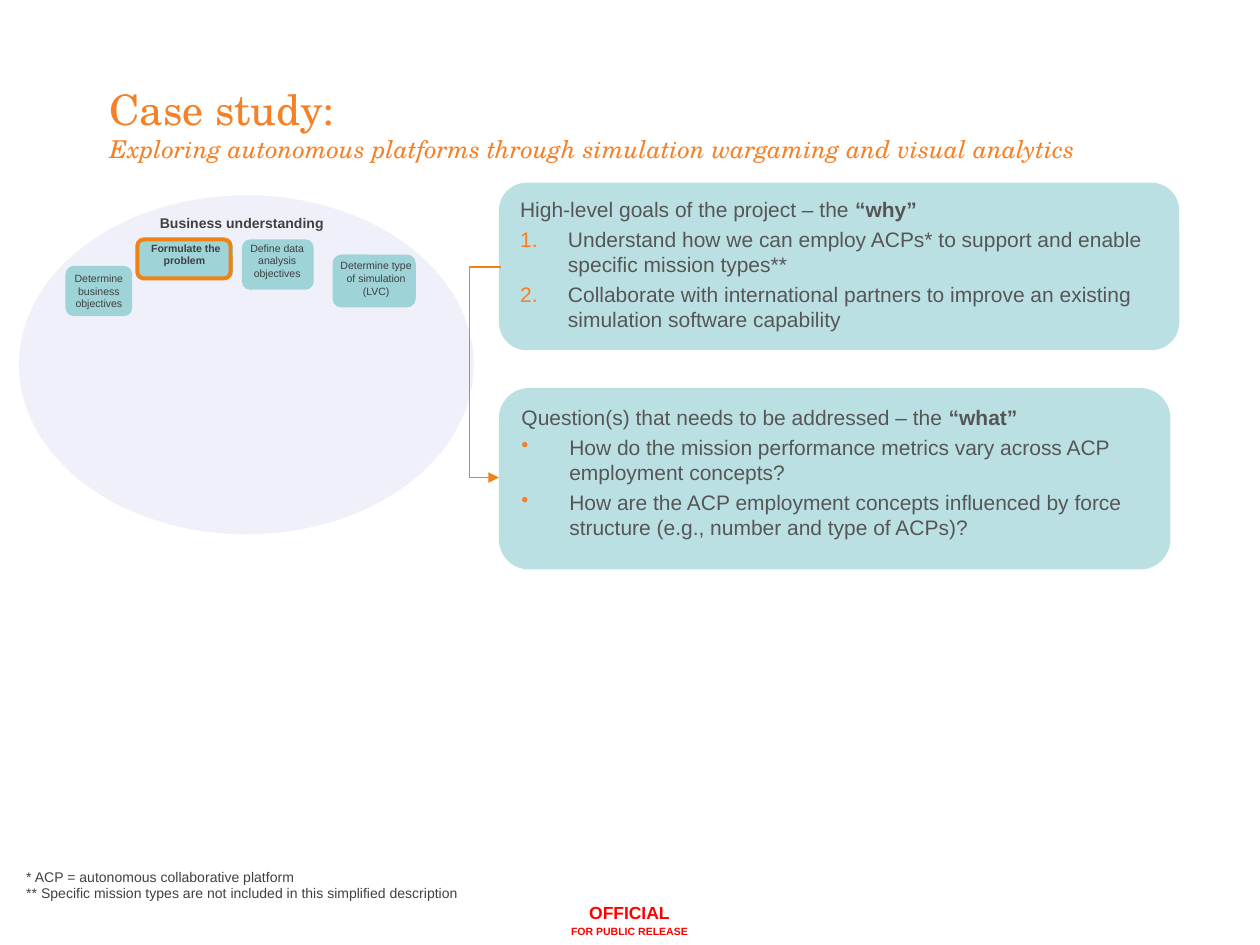
from copy import deepcopy

from pptx import Presentation
from pptx.dml.color import RGBColor
from pptx.enum.shapes import MSO_CONNECTOR, MSO_SHAPE
from pptx.enum.text import MSO_ANCHOR, MSO_AUTO_SIZE, PP_ALIGN
from pptx.oxml.ns import qn
from pptx.util import Inches, Pt
from lxml.etree import SubElement

HUES = {"orange": "F58025", "line": "EF8215", "teal": "BBE0E3", "tile": "9ED3D7",
        "oval": "F0F0FA", "grey": "565656", "dark": "404040", "red": "FF0000"}


def tint(name):
    return RGBColor.from_string(HUES[name])


class Deck:
    """Draws styled elements on the current slide."""

    def __init__(self):
        self.prs = Presentation()
        self.prs.slide_width, self.prs.slide_height = Inches(10), Inches(7.5)
        self.slide = self.prs.slides.add_slide(self.prs.slide_layouts[5])
        self.font = "Arial"

    def style(self, run, size, hue, bold=False, italic=False, font=None):
        face = run.font
        face.name, face.size = font or self.font, Pt(size)
        face.bold, face.italic = bold, italic
        face.color.rgb = tint(hue)

    def frame(self, box, align):
        frame = box.text_frame
        frame.word_wrap = True
        frame.auto_size = MSO_AUTO_SIZE.NONE
        frame.vertical_anchor = MSO_ANCHOR.TOP
        frame.paragraphs[0].alignment = align
        return frame

    def title(self, at, head, sub):
        box = self.slide.shapes.title
        box.left, box.top, box.width, box.height = map(Inches, at)
        para = self.frame(box, PP_ALIGN.LEFT).paragraphs[0]
        para.text = f"{head}\n{sub}"
        first, last = para.runs
        self.style(first, 24, "orange", font="TeX Gyre Schola")
        self.style(last, 14, "orange", italic=True, font="TeX Gyre Schola")
        para._p.find(qn("a:br")).insert(0, deepcopy(first._r.rPr))

    def shape(self, kind, at, fill=None, line=None):
        shape = self.slide.shapes.add_shape(kind, *map(Inches, at))
        shape.shadow.inherit = False
        if fill:
            shape.fill.solid()
            shape.fill.fore_color.rgb = tint(fill)
        else:
            shape.fill.background()
        if line:
            shape.line.color.rgb = tint(line)
            shape.line.width = Pt(2.25)
        else:
            shape.line.fill.background()

    def text(self, at, words, size, hue, bold=False, align=PP_ALIGN.LEFT):
        box = self.slide.shapes.add_textbox(*map(Inches, at))
        frame = self.frame(box, align)
        para = frame.paragraphs[0]
        para.text = words
        for run in para.runs:
            self.style(run, size, hue, bold)
        for gap in para._p.findall(qn("a:br")):
            gap.insert(0, deepcopy(para.runs[0]._r.rPr))
        return frame

    def add(self, frame, words, size, hue, bold=False):
        para = frame.add_paragraph()
        para.text = words
        para.alignment = frame.paragraphs[0].alignment
        para.space_before = Pt(round(size * 0.23, 1))
        self.style(para.runs[0], size, hue, bold)
        return para

    def points(self, at, lead, key, items, tag, mark):
        frame = self.text(at, lead, 12, "grey")
        run = frame.paragraphs[0].add_run()
        run.text = key
        self.style(run, 12, "grey", bold=True)
        for item in items:
            props = self.add(frame, item, 12, "grey")._p.get_or_add_pPr()
            props.set("marL", str(Inches(0.38)))
            props.set("indent", str(-Inches(0.38)))
            color = SubElement(props, qn("a:buClr"))
            SubElement(color, qn("a:srgbClr")).set("val", HUES["orange"])
            bullet = SubElement(props, qn(tag))
            for name, value in mark.items():
                bullet.set(name, value)

    def elbow(self, start, end, bend):
        link = self.slide.shapes.add_connector(
            MSO_CONNECTOR.ELBOW, *map(Inches, start + end))
        link.line.color.rgb = tint("line")
        link.line.width = Pt(0.75)
        SubElement(link.line._get_or_add_ln(), qn("a:tailEnd")).set("type", "triangle")
        props = link._element.spPr
        SubElement(props, qn("a:effectLst"))
        ratio = round((bend - start[0]) / (end[0] - start[0]) * 100000)
        guide = SubElement(props.find(qn("a:prstGeom")).get_or_add_avLst(), qn("a:gd"))
        guide.set("name", "adj1")
        guide.set("fmla", f"val {ratio}")


def main():
    deck = Deck()
    box = MSO_SHAPE.ROUNDED_RECTANGLE
    mid = PP_ALIGN.CENTER
    deck.title((0.77, 0.61, 8.5, 0.68), "Case study: ",
               "Exploring autonomous platforms through simulation wargaming and visual analytics")

    deck.shape(box, (3.96, 1.45, 5.4, 1.33), "teal")
    deck.points((4.03, 1.51, 5.33, 1.27), "High-level goals of the project – the ", "“why”", [
        "Understand how we can employ ACPs* to support and enable specific mission types**",
        "Collaborate with international partners to improve an existing simulation "
        "software capability"], "a:buAutoNum", {"type": "arabicPeriod"})

    deck.shape(MSO_SHAPE.OVAL, (0.15, 1.55, 3.61, 2.69), "oval")
    deck.text((0.48, 1.65, 2.88, 0.24), "Business understanding", 8, "dark", True, mid)
    tiles = [
        ("Formulate the problem ", (1.1, 1.91, 0.75, 0.3), (1.1, 1.87, 0.75, 0.3), True),
        ("Determine type of simulation (LVC)", (2.64, 2.02, 0.66, 0.42),
         (2.56, 2.01, 0.85, 0.4), False),
        ("Determine business objectives", (0.52, 2.11, 0.53, 0.4),
         (0.45, 2.11, 0.67, 0.4), False),
        ("Define data analysis objectives", (1.92, 1.9, 0.57, 0.4),
         (1.8, 1.87, 0.8, 0.4), False),
    ]
    for words, tile, area, bold in tiles:
        deck.shape(box, tile, "tile")
        deck.text(area, words, 6, "dark", bold, mid)

    deck.shape(box, (3.96, 3.08, 5.33, 1.44), "teal")
    deck.points((4.04, 3.16, 5.19, 1.3), "Question(s) that needs to be addressed – the ",
                "“what”", [
        "How do the mission performance metrics vary across ACP employment concepts?",
        "How are the ACP employment concepts influenced by force structure "
        "(e.g., number and type of ACPs)?"], "a:buChar", {"char": "•"})

    deck.elbow((3.98, 2.12), (3.96, 3.79), 3.73)
    deck.shape(box, (1.09, 1.9, 0.74, 0.31), line="line")
    deck.text((0.11, 6.84, 3.89, 0.38),
              "* ACP = autonomous collaborative platform\n"
              "** Specific mission types are not included in this simplified description",
              8, "dark")
    label = deck.text((3.8, 7.11, 2.39, 0.24), "OFFICIAL", 10, "red", True, mid)
    deck.add(label, "FOR PUBLIC RELEASE", 6, "red", True)
    deck.prs.save("out.pptx")


if __name__ == "__main__":
    main()
